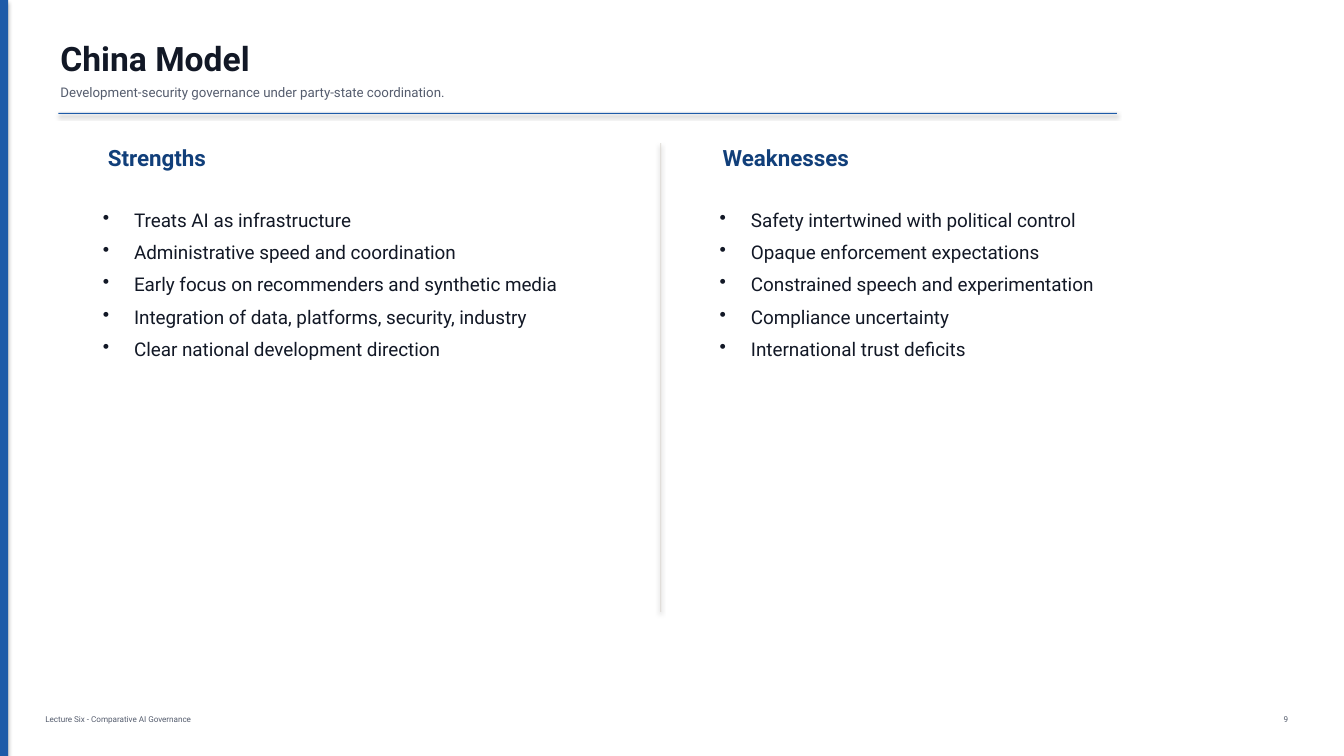
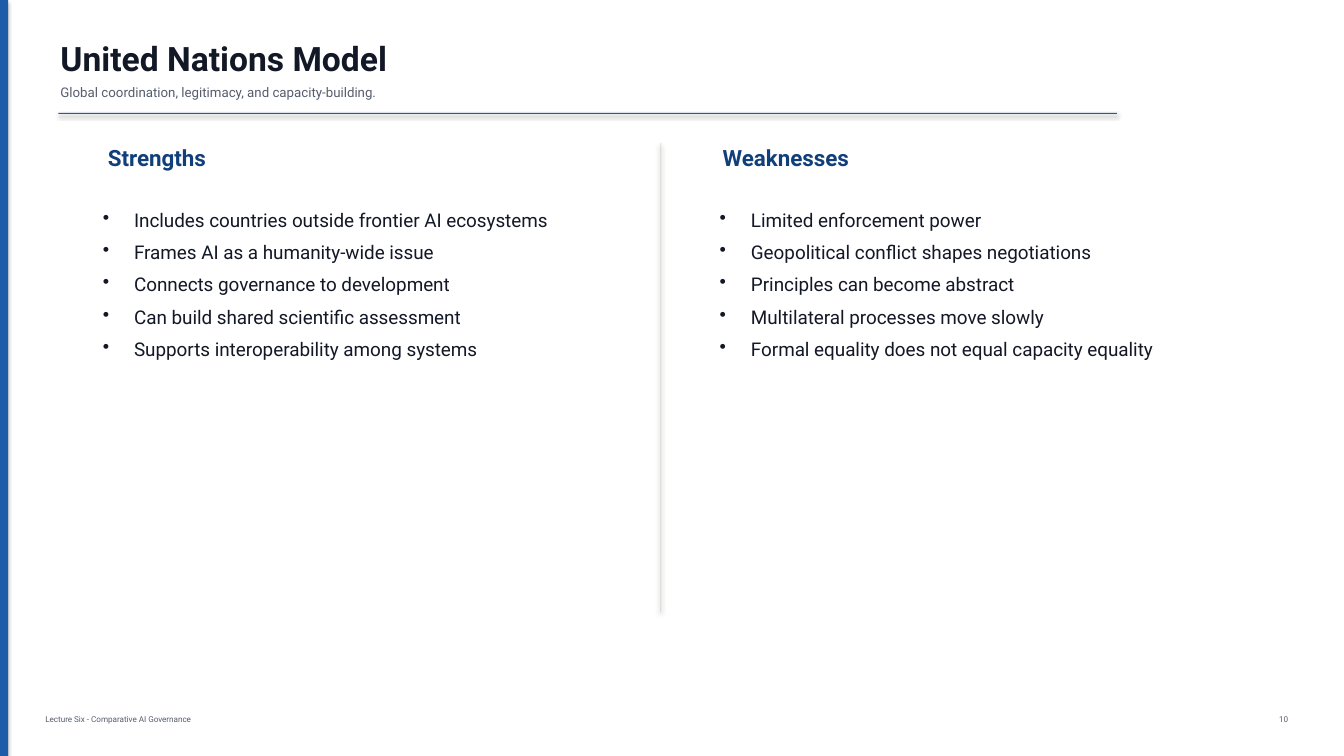
from lxml import etree
from pptx import Presentation, util as u
from pptx.dml.color import RGBColor
from pptx.enum import shapes, text
from pptx.oxml import ns

CELL = u.Inches(0.1)
COLUMNS, ROWS = 133.33, 75
FONT = "Roboto"
FOOTER = "Lecture Six - Comparative AI Governance"
COLORS = {
    "background": "FFFFFF",
    "accent": "1E5BA8",
    "heading": "113F7A",
    "ink": "121826",
    "muted": "555D6E",
    "divider": "DAD6CF",
}
STYLES = {
    "title": (24, "ink", True),
    "subtitle": (9.5, "muted", False),
    "heading": (16, "heading", True),
    "bullet": (13.5, "ink", False),
    "footer": (5.8, "muted", False),
}
SLIDES = [
    (9, "China Model", "Development-security governance under party-state coordination.", [
        ("Strengths", [
            "Treats AI as infrastructure",
            "Administrative speed and coordination",
            "Early focus on recommenders and synthetic media",
            "Integration of data, platforms, security, industry",
            "Clear national development direction",
        ]),
        ("Weaknesses", [
            "Safety intertwined with political control",
            "Opaque enforcement expectations",
            "Constrained speech and experimentation",
            "Compliance uncertainty",
            "International trust deficits",
        ]),
    ]),
    (10, "United Nations Model", "Global coordination, legitimacy, and capacity-building.", [
        ("Strengths", [
            "Includes countries outside frontier AI ecosystems",
            "Frames AI as a humanity-wide issue",
            "Connects governance to development",
            "Can build shared scientific assessment",
            "Supports interoperability among systems",
        ]),
        ("Weaknesses", [
            "Limited enforcement power",
            "Geopolitical conflict shapes negotiations",
            "Principles can become abstract",
            "Multilateral processes move slowly",
            "Formal equality does not equal capacity equality",
        ]),
    ]),
]


def grid(*cells):
    return [round(cell * CELL) for cell in cells]


def rgb(name):
    return RGBColor.from_string(COLORS[name])


def add_shadow(bar):
    effects = etree.SubElement(bar._element.spPr, ns.qn("a:effectLst"))
    shadow = etree.SubElement(effects, ns.qn("a:outerShdw"), blurRad="40000",
                              dist="23000", dir="5400000", rotWithShape="0")
    black = etree.SubElement(shadow, ns.qn("a:srgbClr"), val="000000")
    etree.SubElement(black, ns.qn("a:alpha"), val="35000")


def add_bar(slide, box, color):
    bar = slide.shapes.add_shape(shapes.MSO_SHAPE.RECTANGLE, *grid(*box))
    bar.fill.solid()
    bar.fill.fore_color.rgb = rgb(color)
    bar.line.fill.background()
    add_shadow(bar)


def set_bullet(paragraph):
    indent = u.Inches(0.31)
    properties = paragraph._p.get_or_add_pPr()
    properties.set("marL", str(indent))
    properties.set("indent", str(-indent))
    etree.SubElement(properties, ns.qn("a:buChar"), char="•")
    paragraph.line_spacing = 1.05
    paragraph.space_after = u.Pt(6)


def add_text(slide, box, lines, style, align=text.PP_ALIGN.LEFT):
    frame = slide.shapes.add_textbox(*grid(*box)).text_frame
    frame.word_wrap = True
    frame.auto_size = text.MSO_AUTO_SIZE.SHAPE_TO_FIT_TEXT
    frame.margin_left = frame.margin_right = u.Inches(0.02)
    frame.margin_top = frame.margin_bottom = u.Inches(0.01)
    size, color, bold = STYLES[style]
    for number, line in enumerate(lines):
        paragraph = frame.add_paragraph() if number else frame.paragraphs[0]
        paragraph.alignment = align
        if style == "bullet":
            set_bullet(paragraph)
        run = paragraph.add_run()
        run.text = line
        run.font.name = FONT
        run.font.size = u.Pt(size)
        run.font.bold = bold
        run.font.color.rgb = rgb(color)


def add_header(slide, box, title, subtitle):
    left, top, width, height = box
    add_text(slide, (left, top, width - 1, 4.2), [title], "title")
    add_text(slide, (left, top + 4.6, width + 1, 2.8), [subtitle], "subtitle")
    add_bar(slide, (left, top + height, width, 0.1), "accent")


def add_column(slide, box, outdent, heading, points):
    left, top, width, height = box
    add_text(slide, (left, top, width, 3.5), [heading], "heading")
    add_text(slide, (left - outdent, top + 6.3, width + 2.5, 15.4), points, "bullet")


def add_comparison(slide, box, columns):
    left, top, width, height = box
    column_width = 48
    lefts = (left, left + width - column_width)
    for column_left, outdent, (heading, points) in zip(lefts, (0.5, 0.3), columns):
        add_column(slide, (column_left, top, column_width, height), outdent, heading, points)
    add_bar(slide, (left + width / 2 + 0.5, top, 0.1, height), "divider")


def add_footer(slide, box, page):
    left, top, width, height = box
    page_width = 2.4
    add_text(slide, (left, top, 72, height), [FOOTER], "footer")
    add_text(slide, (left + width - page_width, top, page_width, height),
             [str(page)], "footer", text.PP_ALIGN.RIGHT)


def add_model_slide(deck, page, title, subtitle, columns):
    slide = deck.slides.add_slide(deck.slide_layouts[6])
    slide.background.fill.solid()
    slide.background.fill.fore_color.rgb = rgb("background")
    add_bar(slide, (0, 0, 0.8, ROWS), "accent")
    add_header(slide, (5.8, 3.7, 105, 7.5), title, subtitle)
    add_comparison(slide, (10.5, 14.2, 109, 46.5), columns)
    add_footer(slide, (4.3, 70.8, 123.7, 2.2), page)


def main():
    deck = Presentation()
    deck.slide_width, deck.slide_height = grid(COLUMNS, ROWS)
    for content in SLIDES:
        add_model_slide(deck, *content)
    deck.save("out.pptx")


if __name__ == "__main__":
    main()
